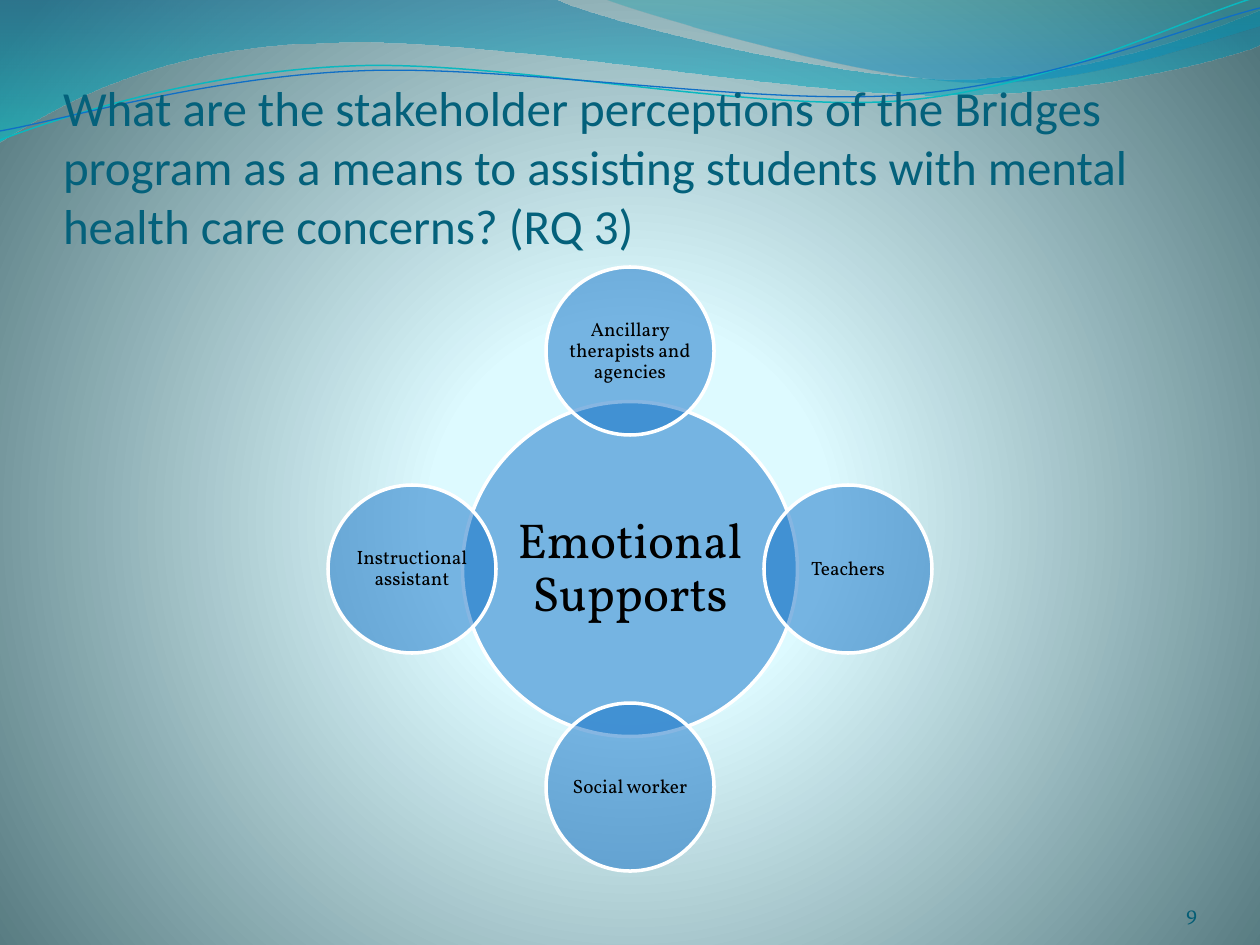
import pptx
import pptx.util
import pptx.dml.color
import pptx.enum.shapes
import pptx.enum.text
import lxml.etree
from pptx.oxml.ns import qn

# Content
QUESTION = ("What are the stakeholder perceptions of the Bridges program as a means "
            "to assisting students with mental health care concerns? (RQ 3)")
PAGE_NUMBER = "9"
CORE = "Emotional Supports"
# Supporters with their direction from the core
SUPPORTERS = [
    ("Ancillary therapists and agencies", (0, -1)),
    ("Teachers", (1, 0)),
    ("Social worker", (0, 1)),
    ("Instructional assistant", (-1, 0)),
]

# Format
PX = 914400 / 126
WIDTH, HEIGHT = 1260, 945
CENTER = (630, 569)
CORE_SIZE, SUPPORTER_SIZE, REACH = 335, 168, 218
COLORS = {"title": "04617B", "number": "045D75", "text": "000000",
          "circle": "0F6FC6", "outline": "FFFFFF"}
HEADING, BODY = "Calibri", "Vollkorn"
ALIGN = pptx.enum.text.PP_ALIGN
ANCHOR = pptx.enum.text.MSO_ANCHOR

# Gradient stops: position %, colour, opacity %
BACKDROP = [(0, "DEFBFF", 100), (25, "DDFAFF", 100), (100, "52767C", 100)]
BACKDROP_PATH = ('<a:path path="circle"><a:fillToRect l="10000" t="110000" '
                 'r="10000" b="100000"/></a:path>')
DOWNWARD = '<a:lin ang="5400000" scaled="0"/>'

# Waves: start point, then lines (2 numbers) and Bezier curves (6 numbers), in px
WAVE_BANDS = [
    ([(0, 0), (554, -1), (600, 21, 837, 79, 955, 79), (1075, 79, 1207, 33, 1260, 11),
      (1261, 45), (1239, 55, 1096, 96, 940, 95), (784, 95, 481, 35, 324, 43),
      (163, 45, 58, 105, -1, 142)],
     [(0, "0074A1", 45), (100, "00C6CF", 55)]),
    ([(604, -1), (641, 14, 859, 78, 969, 82), (1079, 87, 1211, 40, 1260, 26), (1260, 0)],
     [(0, "00A1A9", 30), (80, "008BBF", 45)]),
]
WAVE_LINES = [
    ([(0, 140), (60, 117, 199, 72, 349, 66), (498, 59, 747, 112, 898, 101),
      (1050, 89, 1182, 19, 1257, -3)], "0AB8BF", 0.85),
    ([(0, 131), (59, 121, 207, 77, 357, 71), (508, 64, 752, 106, 903, 95),
      (1053, 84, 1187, 26, 1260, 8)], "0F6FC6", 0.75),
]


def px(value):
    return pptx.util.Emu(round(value * PX))


def rgb(value):
    return pptx.dml.color.RGBColor.from_string(value)


def apply(target, **values):
    for name, value in values.items():
        setattr(target, name, value)


def add_alpha(color, percent):
    lxml.etree.SubElement(color, qn("a:alpha"), val=str(percent * 1000))


def set_gradient(fill, owner, stops, direction):
    fill.gradient()
    gradient = next(owner.iter(qn("a:gradFill")))
    markup = "".join(
        f'<a:gs pos="{at * 1000}"><a:srgbClr val="{color}">'
        f'<a:alpha val="{opacity * 1000}"/></a:srgbClr></a:gs>'
        for at, color, opacity in stops)
    gradient.getparent().replace(gradient, pptx.oxml.parse_xml(
        '<a:gradFill xmlns:a="http://schemas.openxmlformats.org/drawingml/2006/main" '
        f'rotWithShape="1"><a:gsLst>{markup}</a:gsLst>{direction}</a:gradFill>'))


def add_wave(shapes, segments, close):
    ends = [segment[-2:] for segment in segments]
    builder = shapes.build_freeform(*ends[0], scale=PX)
    builder.add_line_segments(ends[1:], close=close)
    wave = builder.convert_to_shape()
    wave.shadow.inherit = False
    # Turn the straight steps into Bezier curves, in the outline's own coordinates
    left, top = (min(axis) for axis in zip(*ends))
    steps = list(wave._element.spPr.iter(qn("a:lnTo")))
    for step, segment in zip(steps, segments[1:]):
        if len(segment) == 6:
            curve = lxml.etree.Element(qn("a:cubicBezTo"))
            for x, y in zip(segment[::2], segment[1::2]):
                lxml.etree.SubElement(curve, qn("a:pt"), x=str(x - left), y=str(y - top))
            step.getparent().replace(step, curve)
    return wave


def write(box, text, font, size, color, align, anchor, insets, spacing=1.0):
    frame = box.text_frame
    frame.text = text
    left, top, right, bottom = map(px, insets)
    apply(frame, word_wrap=True, auto_size=pptx.enum.text.MSO_AUTO_SIZE.NONE,
          vertical_anchor=anchor, margin_left=left, margin_top=top,
          margin_right=right, margin_bottom=bottom)
    paragraph = frame.paragraphs[0]
    apply(paragraph, alignment=align, line_spacing=spacing)
    run_font = paragraph.runs[0].font
    apply(run_font, name=font, size=pptx.util.Pt(size))
    run_font.color.rgb = rgb(color)


def add_circle(shapes, text, center, size, font_size, inset):
    bounds = [px(center[0] - size / 2), px(center[1] - size / 2), px(size), px(size)]
    circle = shapes.add_shape(pptx.enum.shapes.MSO_SHAPE.OVAL, *bounds)
    circle.shadow.inherit = False
    circle.fill.solid()
    circle.fill.fore_color.rgb = rgb(COLORS["circle"])
    add_alpha(next(circle._element.spPr.iter(qn("a:srgbClr"))), 50)
    circle.line.color.rgb = rgb(COLORS["outline"])
    circle.line.width = pptx.util.Pt(2)
    # The label spans the whole circle, wider than an oval's own text area
    label = shapes.add_textbox(*bounds)
    write(label, text, BODY, font_size, COLORS["text"], ALIGN.CENTER, ANCHOR.MIDDLE,
          [inset] * 4, 0.9)


def main():
    deck = pptx.Presentation()
    apply(deck, slide_width=px(WIDTH), slide_height=px(HEIGHT))
    slide = deck.slides.add_slide(deck.slide_layouts[5])
    shapes = slide.shapes

    # Backdrop and waves
    set_gradient(slide.background.fill, slide._element, BACKDROP, BACKDROP_PATH)
    for segments, stops in WAVE_BANDS:
        band = add_wave(shapes, segments, True)
        band.line.fill.background()
        set_gradient(band.fill, band._element.spPr, stops, DOWNWARD)
    for segments, color, width in WAVE_LINES:
        ribbon = add_wave(shapes, segments, False)
        ribbon.fill.background()
        ribbon.line.color.rgb = rgb(color)
        ribbon.line.width = pptx.util.Pt(width)

    # Question, in front of the waves
    question = shapes.title
    shapes._spTree.append(question._element)
    apply(question, left=px(63), top=px(96), width=px(1134), height=px(158))
    write(question, QUESTION, HEADING, 28, COLORS["title"], ALIGN.LEFT, ANCHOR.BOTTOM,
          (0, 6, 0, 0))

    # Page number
    number = shapes.add_textbox(px(1092), px(876), px(105), px(50))
    write(number, PAGE_NUMBER, BODY, 12, COLORS["number"], ALIGN.RIGHT, ANCHOR.BOTTOM,
          (0, 0, 0, 0))

    # Core and its supporters
    add_circle(shapes, CORE, CENTER, CORE_SIZE, 28, 5)
    for supporter, (dx, dy) in SUPPORTERS:
        center = (CENTER[0] + dx * REACH, CENTER[1] + dy * REACH)
        add_circle(shapes, supporter, center, SUPPORTER_SIZE, 11, 3)

    deck.save("out.pptx")


if __name__ == "__main__":
    main()
